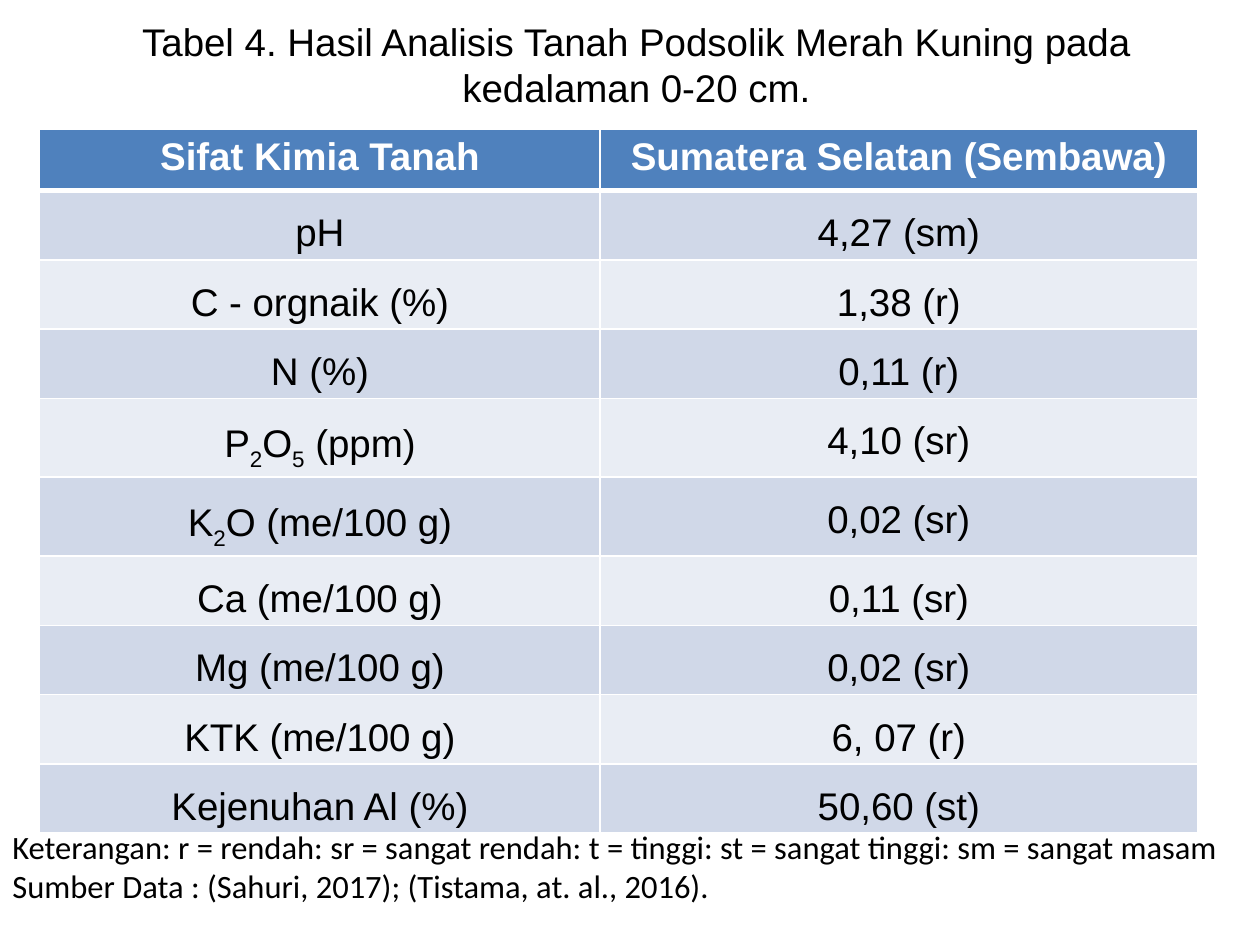
from lxml import etree
from pptx import Presentation
from pptx import util as u
from pptx.dml.color import RGBColor
from pptx.enum import text
from pptx.oxml import ns

COLOURS = {
    "ink": "000000",
    "paper": "FFFFFF",
    "header": "4F81BD",
    "odd": "D0D8E8",
    "even": "E9EDF4",
}
TITLE = "Tabel 4. Hasil Analisis Tanah Podsolik Merah Kuning pada kedalaman 0-20 cm."
HEADINGS = ["Sifat Kimia Tanah", "Sumatera Selatan (Sembawa)"]
SOIL_ROWS = [
    (["pH"], "4,27 (sm)"),
    (["C - orgnaik (%)"], "1,38 (r)"),
    (["N (%)"], "0,11 (r)"),
    (["P", "2", "O", "5", " (ppm)"], "4,10 (sr)"),
    (["K", "2", "O (me/100 g)"], "0,02 (sr)"),
    (["Ca (me/100 g)"], "0,11 (sr)"),
    (["Mg (me/100 g)"], "0,02 (sr)"),
    (["KTK (me/100 g)"], "6, 07 (r)"),
    (["Kejenuhan Al (%)"], "50,60 (st)"),
]
NOTE = (
    "Keterangan: r = rendah: sr = sangat rendah: t = tinggi: st = sangat tinggi: "
    "sm = sangat masam Sumber Data : (Sahuri, 2017); (Tistama, at. al., 2016)."
)


def colour(name):
    return RGBColor.from_string(COLOURS[name])


def add_span(para, words, size=22, face="Arial", ink="ink", bold=False):
    span = para.add_run()
    span.text = words
    span.font.size = u.Pt(size)
    span.font.name = face
    span.font.bold = bold
    span.font.color.rgb = colour(ink)
    return span


def add_text_box(page, box, words, align, **style):
    frame = page.shapes.add_textbox(*box).text_frame
    frame.word_wrap = True
    frame.vertical_anchor = text.MSO_ANCHOR.MIDDLE
    para = frame.paragraphs[0]
    para.alignment = align
    add_span(para, words, **style)


def add_borders(cell, bottom):
    props = cell._tc.get_or_add_tcPr()
    for index, side in enumerate("LRTB"):
        width = bottom if side == "B" else 1
        line = etree.Element(ns.qn(f"a:ln{side}"), w=str(u.Pt(width)))
        fill = etree.SubElement(line, ns.qn("a:solidFill"))
        etree.SubElement(fill, ns.qn("a:srgbClr"), val=COLOURS["paper"])
        props.insert(index, line)


def fill_cell(cell, pieces, band, header):
    cell.fill.solid()
    cell.fill.fore_color.rgb = colour(band)
    add_borders(cell, 3 if header else 1)
    para = cell.text_frame.paragraphs[0]
    para.alignment = text.PP_ALIGN.CENTER
    if not header:
        cell.margin_left = cell.margin_right = u.Cm(0.18)
        cell.margin_top = cell.margin_bottom = 0
        para.line_spacing = 1.5
    for index, piece in enumerate(pieces):
        span = add_span(para, piece, ink="paper" if header else "ink", bold=header)
        if index % 2:
            span.font._element.set("baseline", "-25000")


def add_soil_table(page, box):
    rows = [([HEADINGS[0]], HEADINGS[1])] + SOIL_ROWS
    left, top, width, height = box
    table = page.shapes.add_table(len(rows), 2, left, top, width, height).table
    table.columns[0].width = u.Cm(11.3)
    table.columns[1].width = width - u.Cm(11.3)
    for index, (label, value) in enumerate(rows):
        header = index == 0
        table.rows[index].height = u.Cm(1.24 if header else 1.27)
        band = "header" if header else "odd" if index % 2 else "even"
        fill_cell(table.cell(index, 0), label, band, header)
        fill_cell(table.cell(index, 1), [value], band, header)


def main():
    deck = Presentation()
    deck.slide_width, deck.slide_height = u.Cm(25.4), u.Cm(19.05)
    page = deck.slides.add_slide(deck.slide_layouts[6])
    title_box = (u.Cm(1.4), u.Cm(0), u.Cm(22.86), u.Cm(2.6))
    table_box = (u.Cm(0.8), u.Cm(2.6), u.Cm(23.34), u.Cm(12.67))
    note_box = (u.Cm(0), u.Cm(16.67), deck.slide_width, u.Cm(1.57))
    add_text_box(page, title_box, TITLE, text.PP_ALIGN.CENTER)
    add_soil_table(page, table_box)
    add_text_box(page, note_box, NOTE, text.PP_ALIGN.LEFT, size=18.6, face="Calibri")
    deck.save("out.pptx")


if __name__ == "__main__":
    main()
